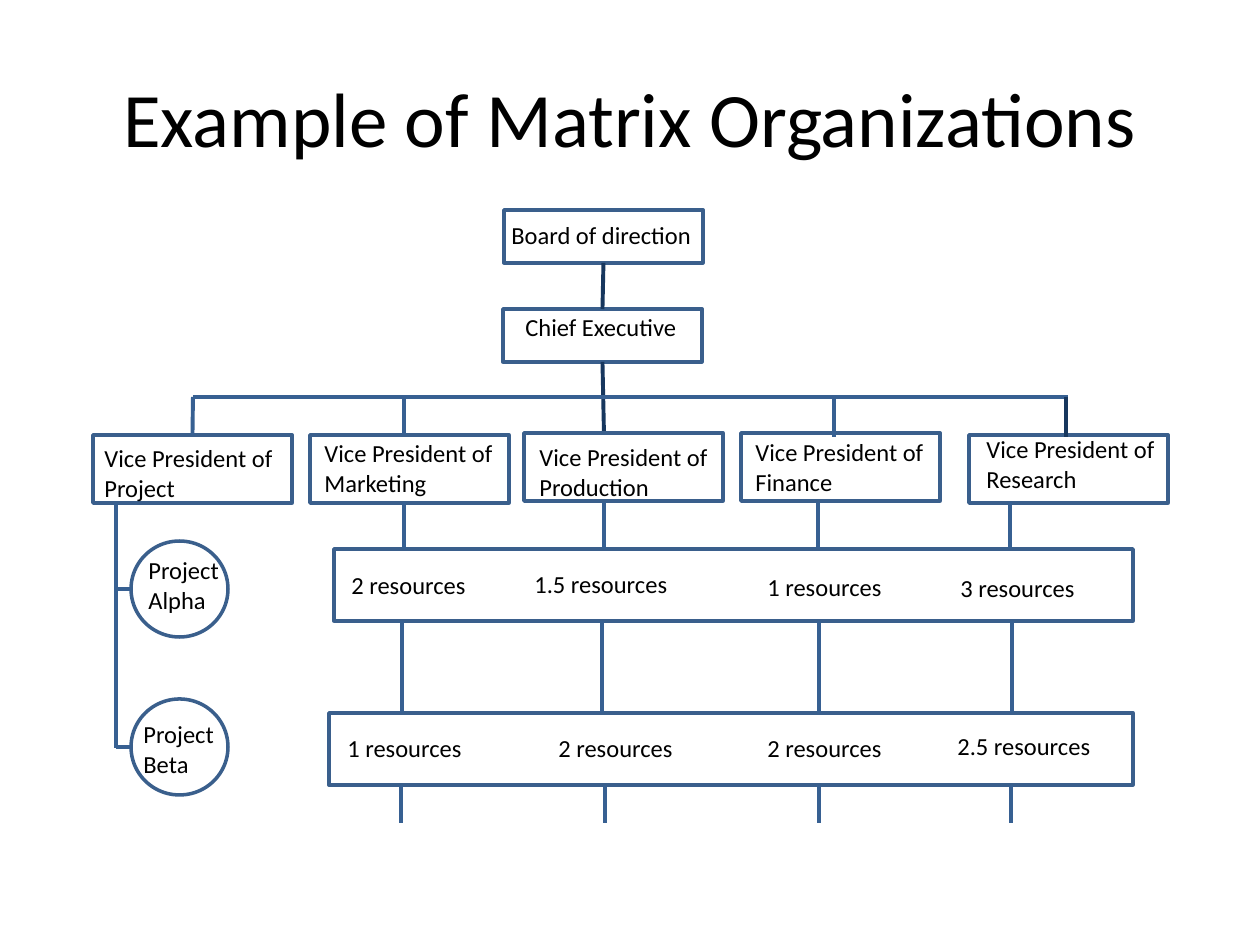
from pptx import Presentation
from pptx.dml.color import RGBColor
from pptx.enum.shapes import MSO_CONNECTOR as Connector, MSO_SHAPE as Preset
from pptx.enum.text import MSO_ANCHOR as Anchor, MSO_AUTO_SIZE as AutoSize, PP_ALIGN as Align
from pptx.oxml.ns import qn
from pptx.util import Pt
from lxml.etree import SubElement

EMU_PER_PX = 914400 / 126
COLOURS = {"text": "000000", "outline": "3A5F8C", "link": "376092", "main_link": "17375E"}
TITLE_FONT = {"name": "Calibri", "size": Pt(44)}
LABEL_FONT = {"name": "Calibri", "size": Pt(14)}
LABEL_FRAME = {"word_wrap": True, "auto_size": AutoSize.SHAPE_TO_FIT_TEXT}
BOX_SIZE = (199, 53)
OFFICE_SIZE = (199, 68)
LABEL_WIDTH = 242

OFFICES = [
    ("Project", (93, 435), (92, 437)),
    ("Marketing", (310, 435), (312, 432)),
    ("Production", (524, 433), (527, 436)),
    ("Finance", (741, 433), (743, 431)),
    ("Research", (969, 435), (974, 428)),
]
PROJECTS = [
    ("Alpha", 541, (136, 549), 115, (334, 549, 799, 72),
     [("2", 339, 564), ("1.5", 522, 563), ("1", 755, 566), ("3", 948, 567)]),
    ("Beta", 699, (131, 713), 135, (329, 713, 804, 72),
     [("1", 335, 727), ("2", 546, 727), ("2", 755, 727), ("2.5", 945, 725)]),
]
COLUMN_LINKS = [
    ((404, 604, 818, 1010), 502, 549),
    ((402, 602, 819, 1012), 621, 713),
    ((401, 605, 819, 1011), 785, 823),
]


def px(*lengths):
    return [round(length * EMU_PER_PX) for length in lengths]


def apply(target, values):
    for name, value in values.items():
        setattr(target, name, value)


def colour(name):
    return RGBColor.from_string(COLOURS[name])


def format_font(font, values):
    apply(font, values)
    font.color.rgb = colour("text")


def add_title(slide, text):
    title = slide.shapes.title
    left, top, width, height = px(63, 38, 1134, 157)
    apply(title, {"left": left, "top": top, "width": width, "height": height})
    title.text_frame.text = text
    title.text_frame.vertical_anchor = Anchor.MIDDLE
    paragraph = title.text_frame.paragraphs[0]
    paragraph.alignment = Align.CENTER
    format_font(paragraph.runs[0].font, TITLE_FONT)


def add_outline(slide, preset, left, top, width, height):
    shape = slide.shapes.add_shape(preset, *px(left, top, width, height))
    shape.shadow.inherit = False
    shape.fill.background()
    shape.line.color.rgb = colour("outline")
    shape.line.width = Pt(2)
    return shape


def add_label(slide, lines, left, top, width=LABEL_WIDTH):
    height = 43 if len(lines) == 1 else 72
    frame = slide.shapes.add_textbox(*px(left, top, width, height)).text_frame
    apply(frame, LABEL_FRAME)
    frame.text = "\n".join(lines)
    for paragraph in frame.paragraphs:
        format_font(paragraph.runs[0].font, LABEL_FONT)


def add_link(slide, start, end, name="link"):
    link = slide.shapes.add_connector(Connector.STRAIGHT, *px(*start, *end))
    link.line.color.rgb = colour(name)
    link.line.width = Pt(2.25)
    SubElement(link._element.spPr, qn("a:effectLst"))
    return link


def add_management(slide):
    board = add_outline(slide, Preset.RECTANGLE, 504, 210, *BOX_SIZE)
    chief = add_outline(slide, Preset.RECTANGLE, 503, 309, *BOX_SIZE)
    add_label(slide, ["Board of direction"], 499, 214)
    add_label(slide, ["Chief Executive"], 513, 306)
    board_link = add_link(slide, (603, 263), (603, 309), "main_link")
    board_link.begin_connect(board, 2)
    board_link.end_connect(chief, 0)
    chief_link = add_link(slide, (603, 362), (604, 433), "main_link")
    chief_link.begin_connect(chief, 2)


def add_offices(slide):
    boxes = {}
    for name, corner, label_corner in OFFICES:
        boxes[name] = add_outline(slide, Preset.RECTANGLE, *corner, *OFFICE_SIZE)
        add_label(slide, ["Vice President of", name], *label_corner)
    bus = 397
    add_link(slide, (193, bus), (1068, bus))
    project_link = add_link(slide, (193, bus), (193, 435))
    project_link.end_connect(boxes["Project"], 0)
    for x, bottom, name in [(404, 435, "link"), (834, 437, "link"), (1066, 437, "main_link")]:
        add_link(slide, (x, bus), (x, bottom), name)


def add_projects(slide):
    trunk, circle_left, diameter = 116, 131, 96
    add_link(slide, (trunk, 503), (trunk, 748))
    for name, top, label_corner, label_width, band, resources in PROJECTS:
        add_outline(slide, Preset.OVAL, circle_left, top, diameter + 1, diameter)
        middle = top + diameter // 2
        add_link(slide, (trunk, middle), (circle_left, middle))
        add_label(slide, ["Project", name], *label_corner, label_width)
        add_outline(slide, Preset.RECTANGLE, *band)
        for amount, left, label_top in resources:
            add_label(slide, [f"{amount} resources"], left, label_top)
    for columns, top, bottom in COLUMN_LINKS:
        for x in columns:
            add_link(slide, (x, top), (x, bottom))


def main():
    presentation = Presentation()
    width, height = px(1260, 945)
    apply(presentation, {"slide_width": width, "slide_height": height})
    slide = presentation.slides.add_slide(presentation.slide_layouts[5])
    add_title(slide, "Example of Matrix Organizations")
    add_management(slide)
    add_offices(slide)
    add_projects(slide)
    presentation.save("out.pptx")


if __name__ == "__main__":
    main()
